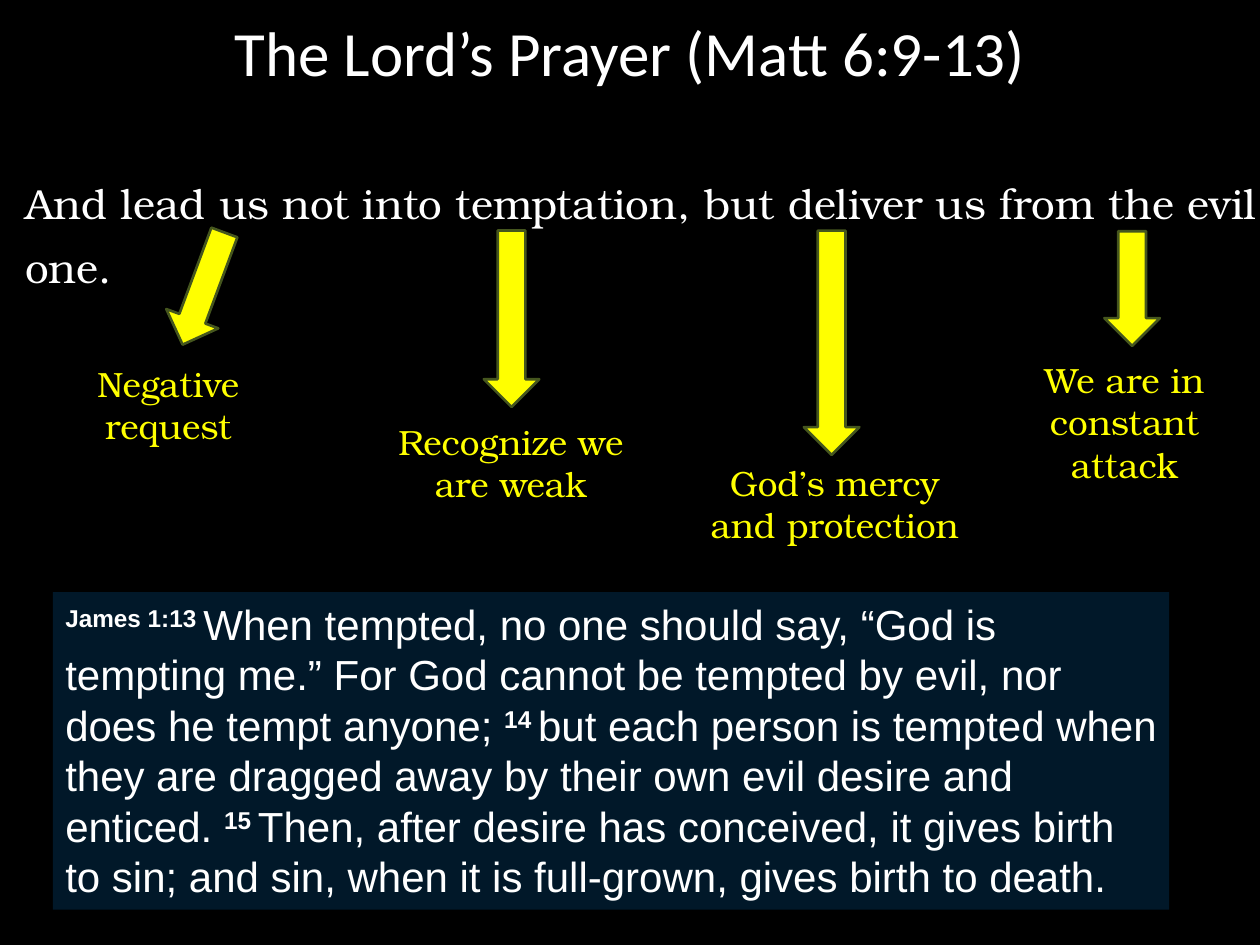
from pptx import Presentation
from pptx.dml.color import RGBColor
from pptx.enum.shapes import MSO_SHAPE
from pptx.enum.text import MSO_ANCHOR, MSO_AUTO_SIZE, PP_ALIGN
from pptx.util import Inches, Pt

WHITE, YELLOW, BLACK, NAVY, OLIVE = "FFFFFF", "FFFF00", "000000", "011829", "45561E"
SERIF = "TeX Gyre Bonum"
COLS, ROWS = 100, 75

# label, its left and top, arrow centre x and y, arrow length, arrow angle
POINTS = [
    ("Negative request", 2.1, 28.3, 16.15, 22.9, 9.5, 110.4),
    ("Recognize we are weak", 29.3, 32.9, 40.6, 25.3, 14, 90),
    ("God’s mercy and protection", 55, 36.1, 66, 27.2, 17.8, 90),
    ("We are in constant attack", 78, 28, 89.85, 22.9, 9.1, 90),
]
# verse number, verse text
VERSES = [
    ("James 1:13 ", "When tempted, no one should say, “God is tempting me.” For God "
     "cannot be tempted by evil, nor does he tempt anyone; "),
    ("14 ", "but each person is tempted when they are dragged away by their "
     "own evil desire and enticed. "),
    ("15 ", "Then, after desire has conceived, it gives birth to sin; and sin, "
     "when it is full-grown, gives birth to death."),
]


def color(code):
    return RGBColor.from_string(code)


def apply(item, values):
    for name, value in values.items():
        setattr(item, name, value)


class Board:
    """Slide with a grid of 100 columns by 75 rows."""

    def __init__(self, deck):
        self.deck = deck
        self.slide = deck.slides.add_slide(deck.slide_layouts[5])
        fill = self.slide.background.fill
        fill.solid()
        fill.fore_color.rgb = color(BLACK)

    def box(self, x, y, w, h):
        col, row = self.deck.slide_width / COLS, self.deck.slide_height / ROWS
        return [round(n) for n in (x * col, y * row, w * col, h * row)]

    def letter(self, shape, runs, align, size, font, tint, space=None):
        """Fill a shape with one paragraph of (text, is_raised) runs."""
        frame = shape.text_frame
        apply(frame, dict(word_wrap=True, auto_size=MSO_AUTO_SIZE.NONE,
                          vertical_anchor=MSO_ANCHOR.TOP))
        para = frame.paragraphs[0]
        apply(para, dict(alignment=align, line_spacing=space))
        for text, raised in runs:
            run = para.add_run()
            run.text = text
            apply(run.font, dict(size=Pt(size), name=font, bold=raised))
            run.font.color.rgb = color(tint)
            if raised:
                run._r.get_or_add_rPr().set("baseline", "30000")

    def title(self, text, *place):
        shape = self.slide.shapes.title
        apply(shape, dict(zip(("left", "top", "width", "height"), self.box(*place))))
        self.letter(shape, [(text, False)], PP_ALIGN.CENTER, 36, "Calibri", WHITE)

    def text(self, text, place, align, size, tint, space=None):
        shape = self.slide.shapes.add_textbox(*self.box(*place))
        self.letter(shape, [(text, False)], align, size, SERIF, tint, space)

    def shape(self, kind, place, fill, line=None):
        shape = self.slide.shapes.add_shape(kind, *self.box(*place))
        shape.shadow.inherit = False
        shape.fill.solid()
        shape.fill.fore_color.rgb = color(fill)
        if line:
            shape.line.color.rgb = color(line)
            shape.line.width = Pt(1.5)
        else:
            shape.line.fill.background()
        return shape

    def arrow(self, x, y, size, angle, thick=4.4):
        """Arrow centred on x, y and turned clockwise from pointing right."""
        place = (x - size / 2, y - thick / 2, size, thick)
        self.shape(MSO_SHAPE.RIGHT_ARROW, place, YELLOW, OLIVE).rotation = angle

    def point(self, label, left, top, *arrow):
        self.text(label, (left, top, 22.5, 7.7), PP_ALIGN.CENTER, 20, YELLOW)
        self.arrow(*arrow)

    def quote(self, verses, *place):
        panel = self.shape(MSO_SHAPE.RECTANGLE, place, NAVY)
        runs = [run for mark, text in verses for run in ((mark, True), (text, False))]
        self.letter(panel, runs, PP_ALIGN.LEFT, 24, "Arial", WHITE)


def main():
    deck = Presentation()
    deck.slide_width, deck.slide_height = Inches(10), Inches(7.5)
    board = Board(deck)
    board.title("The Lord’s Prayer (Matt 6:9-13)", 11.2, 0.6, 77.6, 7.1)
    board.text("And lead us not into temptation, but deliver us from the evil one.",
               (1, 12.5, 100.2, 10.4), PP_ALIGN.LEFT, 24, WHITE, 1.27)
    for point in POINTS:
        board.point(*point)
    board.quote(VERSES, 4.2, 47, 88.6, 25.2)
    deck.save("out.pptx")


if __name__ == "__main__":
    main()
